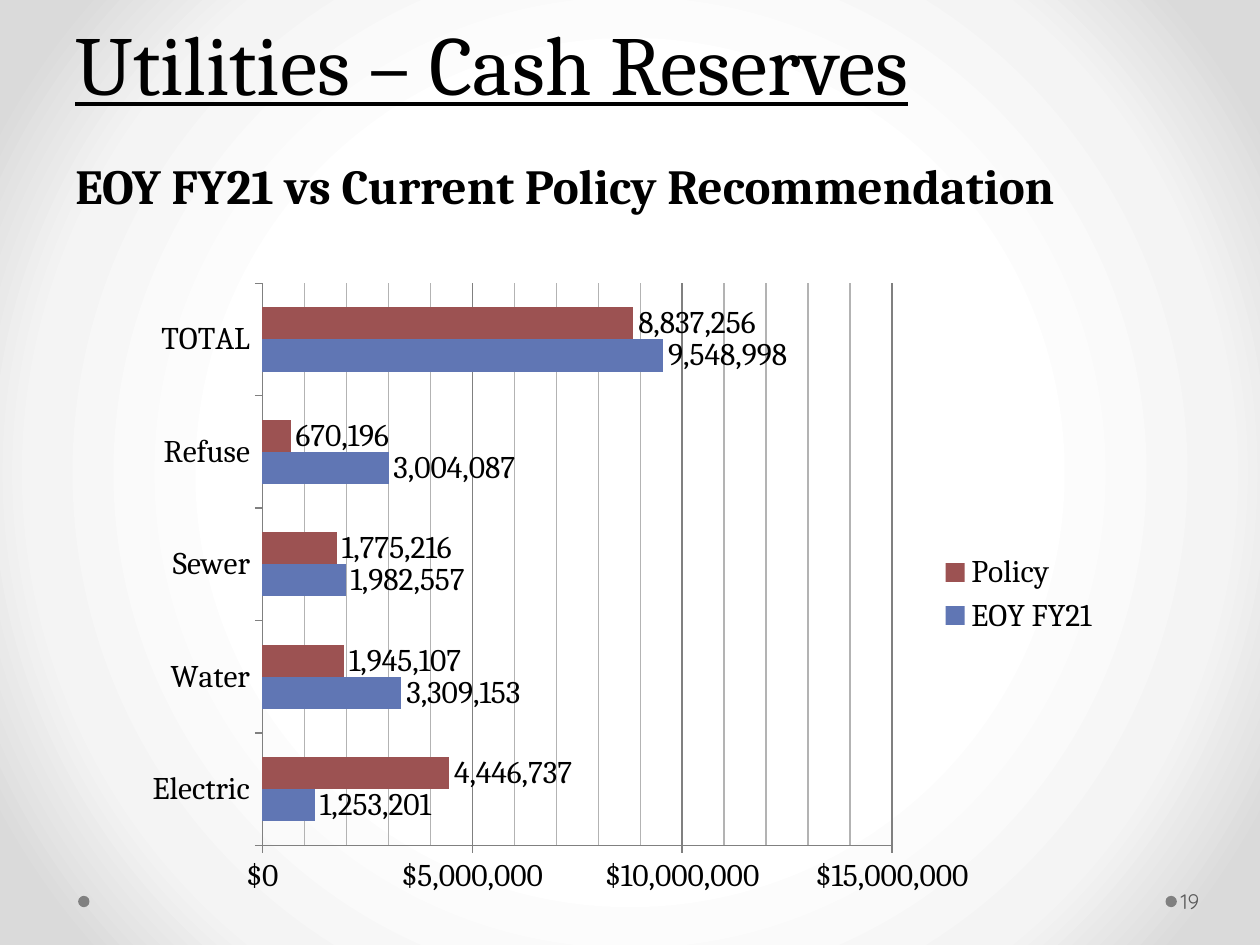
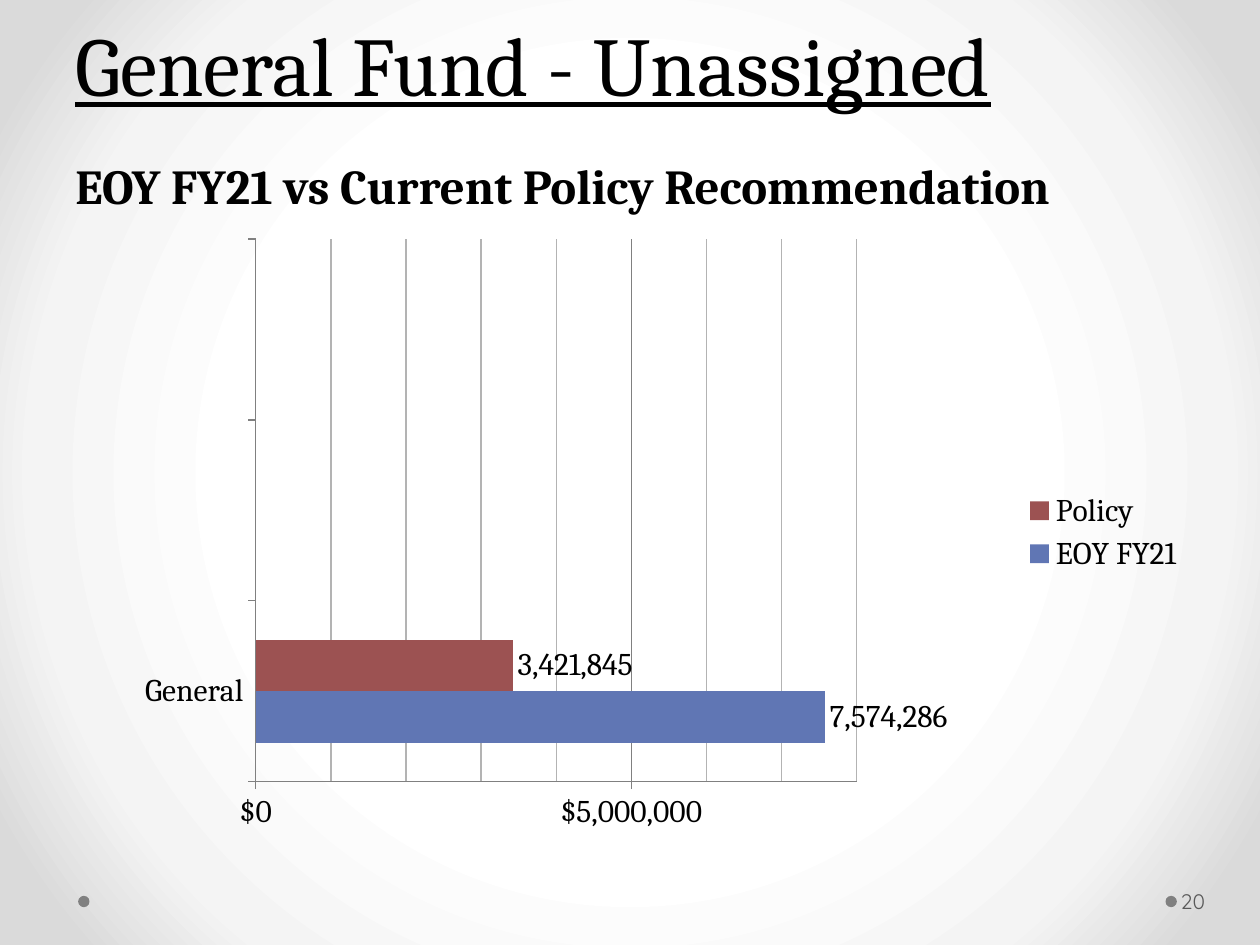
from pptx import Presentation
from pptx.chart.data import CategoryChartData
from pptx.dml.color import RGBColor
from pptx.enum.chart import XL_CHART_TYPE, XL_LABEL_POSITION, XL_LEGEND_POSITION, XL_TICK_MARK
from pptx.enum.shapes import MSO_SHAPE
from pptx.enum.text import MSO_ANCHOR
from pptx.oxml import parse_xml
from pptx.oxml.ns import nsdecls, qn
from pptx.util import Inches, Pt

COLS, ROWS = 20, 15
SERIF, SANS = "Cambria", "Quicksand"
BLACK, GREY, DIM, PALE = "000000", "808080", "595959", "B3B3B3"
BLUE, RED = "6076B4", "9C5252"
GLOW = [(50, "FFFFFF"), (76, "F4F4F4"), (92, "DADADA")]
NOTE = "EOY FY21 vs Current Policy Recommendation"


def color(code):
    return RGBColor.from_string(code)


def write(para, text, size=18, font=SERIF, fill=BLACK, bold=False, under=False):
    run = para.add_run()
    run.text = text
    face = run.font
    face.size, face.name = Pt(size), font
    face.bold, face.underline = bold, under
    face.color.rgb = color(fill)


class Deck:
    """Holds the shared style and the slide being built, on a 20 by 15 grid."""

    def __init__(self):
        self.file = Presentation()
        self.file.slide_width, self.file.slide_height = Inches(10), Inches(7.5)
        self.slide = None
        self.glow()

    def glow(self):
        """Give the master its round white-to-grey background."""
        master = self.file.slide_master
        master.background.fill.gradient()
        stops = "".join(
            f'<a:gs pos="{pos * 1000}"><a:srgbClr val="{code}"/></a:gs>' for pos, code in GLOW)
        old = master.element.find(".//" + qn("p:bg")).find(".//" + qn("a:gradFill"))
        new = parse_xml(
            f'<a:gradFill {nsdecls("a")} rotWithShape="1"><a:gsLst>{stops}</a:gsLst>'
            '<a:path path="circle"><a:fillToRect l="50000" t="50000" r="50000" b="50000"/>'
            '</a:path></a:gradFill>')
        old.getparent().replace(old, new)

    def cells(self, col, row, wide, high):
        unit_x, unit_y = self.file.slide_width / COLS, self.file.slide_height / ROWS
        return [round(n) for n in (col * unit_x, row * unit_y, wide * unit_x, high * unit_y)]

    def start(self, title, number, size, small):
        """Add a slide with its title, footer dots and page number."""
        self.slide = self.file.slides.add_slide(self.file.slide_layouts[6])
        for col in (18.5, 1.24):
            self.dot(col, 14.22)
        para = self.box(1, 0, 18, 3.5, MSO_ANCHOR.BOTTOM)
        para.line_spacing = Pt(58)
        write(para, title, size=size, under=True)
        para.add_line_break()
        write(para, NOTE, size=small, bold=True)
        para = self.box(18.68, 13.9, 1.22, 0.8, MSO_ANCHOR.MIDDLE, left=0.03)
        write(para, str(number), size=12, font=SANS, fill=DIM)

    def dot(self, col, row):
        shape = self.slide.shapes.add_shape(MSO_SHAPE.OVAL, *self.cells(col, row, 0.18, 0.18))
        shape.shadow.inherit = False
        shape.fill.solid()
        shape.fill.fore_color.rgb = color(GREY)
        shape.line.fill.background()

    def box(self, col, row, wide, high, anchor, left=0.1):
        """Add a text box and return its first paragraph."""
        frame = self.slide.shapes.add_textbox(*self.cells(col, row, wide, high)).text_frame
        frame.word_wrap = True
        frame.vertical_anchor = anchor
        frame.margin_left = Inches(left)
        return frame.paragraphs[0]

    def bars(self, place, names, series, top, inner):
        """Add a bar chart; inner is the plot's x, y, w, h as shares of the chart."""
        data = CategoryChartData()
        data.categories = names
        for name, values in series.items():
            data.add_series(name, values)
        chart = self.slide.shapes.add_chart(
            XL_CHART_TYPE.BAR_CLUSTERED, *self.cells(*place), data).chart
        chart.has_title = False
        chart.font.size, chart.font.name = Pt(18), SERIF
        chart.font.color.rgb = color(BLACK)
        chart.has_legend = True
        chart.legend.position = XL_LEGEND_POSITION.RIGHT
        chart.legend.include_in_layout = False
        plot = chart.plots[0]
        plot.gap_width, plot.overlap, plot.vary_by_categories = 150, 0, False
        for row, code in zip(plot.series, (BLUE, RED)):
            row.format.fill.solid()
            row.format.fill.fore_color.rgb = color(code)
            tags = row.data_labels
            tags.show_value, tags.position = True, XL_LABEL_POSITION.OUTSIDE_END
            tags.number_format, tags.number_format_is_linked = "#,##0", False
        self.axes(chart, top)
        self.fit(chart, inner)

    def axes(self, chart, top):
        base, scale = chart.category_axis, chart.value_axis
        for axis in (base, scale):
            axis.major_tick_mark = XL_TICK_MARK.OUTSIDE
            self.rule(axis.format.line, GREY)
        base.has_major_gridlines = False
        scale.minimum_scale, scale.maximum_scale = 0, top
        scale.major_unit, scale.minor_unit = 5_000_000, 1_000_000
        scale.has_major_gridlines = scale.has_minor_gridlines = True
        self.rule(scale.major_gridlines.format.line, GREY)
        # python-pptx has no minor gridline object, so its line is written as XML
        scale_xml = chart.element.find(".//" + qn("c:valAx"))
        scale_xml.find(qn("c:minorGridlines")).append(parse_xml(
            f'<c:spPr {nsdecls("c", "a")}><a:ln w="9525"><a:solidFill>'
            f'<a:srgbClr val="{PALE}"/></a:solidFill></a:ln></c:spPr>'))
        labels = scale.tick_labels
        labels.number_format, labels.number_format_is_linked = '"$"#,##0', False

    def rule(self, line, code):
        line.color.rgb = color(code)
        line.width = Pt(0.75)

    def fit(self, chart, inner):
        """Fix the inner plot area of a chart."""
        modes = "".join(f'<c:{side}Mode val="edge"/>' for side in "xy")
        sizes = "".join(f'<c:{side} val="{share}"/>' for side, share in zip("xywh", inner))
        area = chart.element.find(".//" + qn("c:plotArea"))
        old = area.find(qn("c:layout"))
        if old is not None:
            area.remove(old)
        area.insert(0, parse_xml(
            f'<c:layout {nsdecls("c")}><c:manualLayout><c:layoutTarget val="inner"/>'
            f'{modes}{sizes}</c:manualLayout></c:layout>'))


def main():
    deck = Deck()
    deck.start("Utilities – Cash Reserves", 19, 48, 28)
    deck.bars(
        (1, 4.18, 16.66, 10.5),
        ["Electric", "Water", "Sewer", "Refuse", "TOTAL"],
        {"EOY FY21": [1253201, 3309153, 1982557, 3004087, 9548998],
         "Policy": [4446737, 1945107, 1775216, 670196, 8837256]},
        15_000_000, (0.19, 0.03, 0.6, 0.85))
    deck.start("General Fund - Unassigned", 20, 47.7, 27.9)
    deck.bars(
        (1, 3.5, 18, 9.9),
        ["General", "", ""],
        {"EOY FY21": [7574286, None, None], "Policy": [3421845, None, None]},
        8_000_000, (0.17, 0.03, 0.53, 0.87))
    deck.file.save("out.pptx")


if __name__ == "__main__":
    main()
